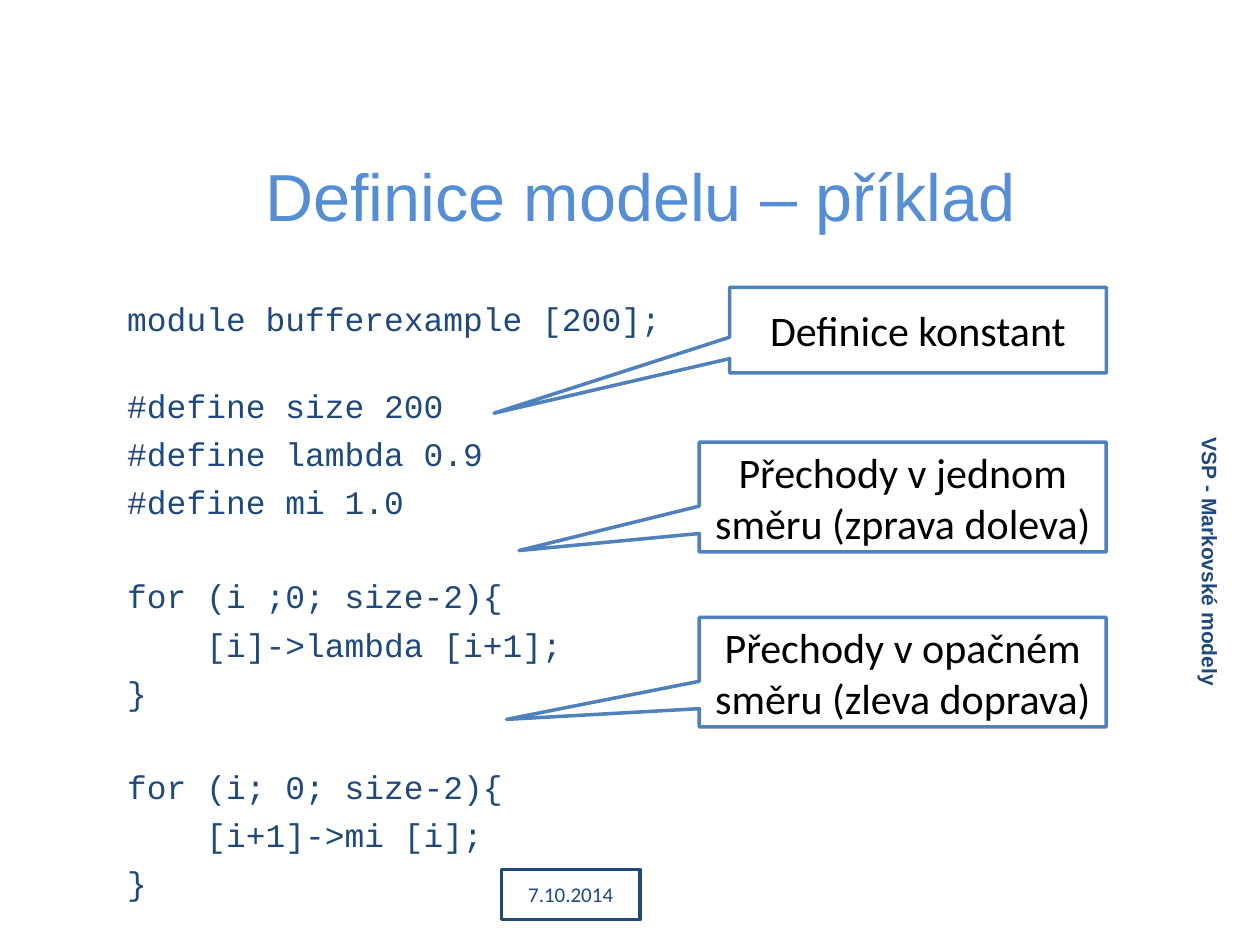
from dataclasses import dataclass
from pptx import Presentation as Deck
from pptx.dml.color import RGBColor as Color
from pptx.enum.shapes import MSO_SHAPE as Kind
from pptx.enum.text import MSO_ANCHOR as Anchor, MSO_AUTO_SIZE as Fit, PP_ALIGN as Align
from pptx.oxml.ns import qn
from pptx.util import Emu, Pt

COLS, ROWS = 100, 75
NAVY, BLUE, SKY = "1F497D", "4F81BD", "558ED5"
BLACK, WHITE = "000000", "FFFFFF"
LEAD = 4.94


@dataclass
class Box:
    x: float
    y: float
    w: float
    h: float


@dataclass
class Font:
    name: str
    size: float
    hue: str
    bold: bool = False


@dataclass
class Note:
    text: str
    box: Box
    tip: tuple[float, float]


@dataclass
class Block:
    gap: float
    lines: list[str]


NOTES = [
    Note("Definice konstant", Box(57.9, 22.8, 29.9, 6.8), (39.2, 32.8)),
    Note("Přechody v jednom směru (zprava doleva)", Box(55.5, 35.1, 32.3, 8.7), (41.2, 43.7)),
    Note("Přechody v opačném směru (zleva doprava)", Box(55.5, 49, 32.3, 8.7), (40.2, 57.1)),
]
CODE = [
    Block(0, ["module bufferexample [200];"]),
    Block(27.2, ["#define size 200", "#define lambda 0.9", "#define mi 1.0"]),
    Block(31.2, ["for (i ;0; size-2){", "    [i]->lambda [i+1];", "}"]),
    Block(31.2, ["for (i; 0; size-2){", "    [i+1]->mi [i];", "}"]),
]

deck = Deck()
deck.slide_width, deck.slide_height = Pt(720), Pt(540)
slide = deck.slides.add_slide(deck.slide_layouts[1])


def tint(code: str) -> Color:
    return Color.from_string(code)


def span(box: Box) -> list[Emu]:
    col, row = deck.slide_width / COLS, deck.slide_height / ROWS
    return [Emu(round(n)) for n in (box.x * col, box.y * row, box.w * col, box.h * row)]


def move(shape, box: Box) -> None:
    shape.left, shape.top, shape.width, shape.height = span(box)


def write(para, text: str, font: Font) -> None:
    run = para.add_run()
    run.text = text
    run.font.name, run.font.size, run.font.bold = font.name, Pt(font.size), font.bold
    run.font.color.rgb = tint(font.hue)


def label(shape, text: str, font: Font) -> None:
    frame = shape.text_frame
    frame.word_wrap, frame.auto_size = True, Fit.NONE
    frame.vertical_anchor = Anchor.MIDDLE
    para = frame.paragraphs[0]
    para.alignment = Align.CENTER
    write(para, text, font)


def panel(kind: Kind, box: Box, edge: str, width: float):
    shape = slide.shapes.add_shape(kind, *span(box))
    shape.shadow.inherit = False
    shape.fill.solid()
    shape.fill.fore_color.rgb = tint(WHITE)
    shape.line.color.rgb = tint(edge)
    shape.line.width = Pt(width)
    return shape


def callout(note: Note) -> None:
    box = note.box
    shape = panel(Kind.RECTANGULAR_CALLOUT, box, BLUE, 2)
    shape.adjustments[0] = (note.tip[0] - box.x) / box.w - 0.5
    shape.adjustments[1] = (note.tip[1] - box.y) / box.h - 0.5
    label(shape, note.text, Font("Calibri", 24, BLACK))


def listing(shape, font: Font) -> None:
    frame = shape.text_frame
    frame.word_wrap, frame.auto_size = True, Fit.NONE
    frame.vertical_anchor = Anchor.TOP
    para = None
    for block in CODE:
        for i, line in enumerate(block.lines):
            para = frame.add_paragraph() if para else frame.paragraphs[0]
            props = para._p.get_or_add_pPr()
            props.set("marL", "0")
            props.set("indent", "0")
            props.append(props.makeelement(qn("a:buNone"), {}))
            para.space_before = Pt(LEAD if i else block.gap)
            write(para, line, font)


title, body = slide.placeholders
move(title, Box(9.1, 9.2, 83.5, 12.6))
label(title, "Definice modelu – příklad", Font("Arial", 38, SKY))
move(body, Box(9.1, 23.2, 83.5, 47))
listing(body, Font("Courier New", 18.8, NAVY))

date = panel(Kind.RECTANGLE, Box(39.8, 69, 11, 4), NAVY, 1.75)
label(date, "7.10.2014", Font("Calibri", 12, NAVY))

side = slide.shapes.add_textbox(*span(Box(74, 42.6, 44.1, 4)))
side.rotation = 90
label(side, "VSP - Markovské modely", Font("Arial", 12, NAVY, True))

for note in NOTES:
    callout(note)

deck.save("out.pptx")
